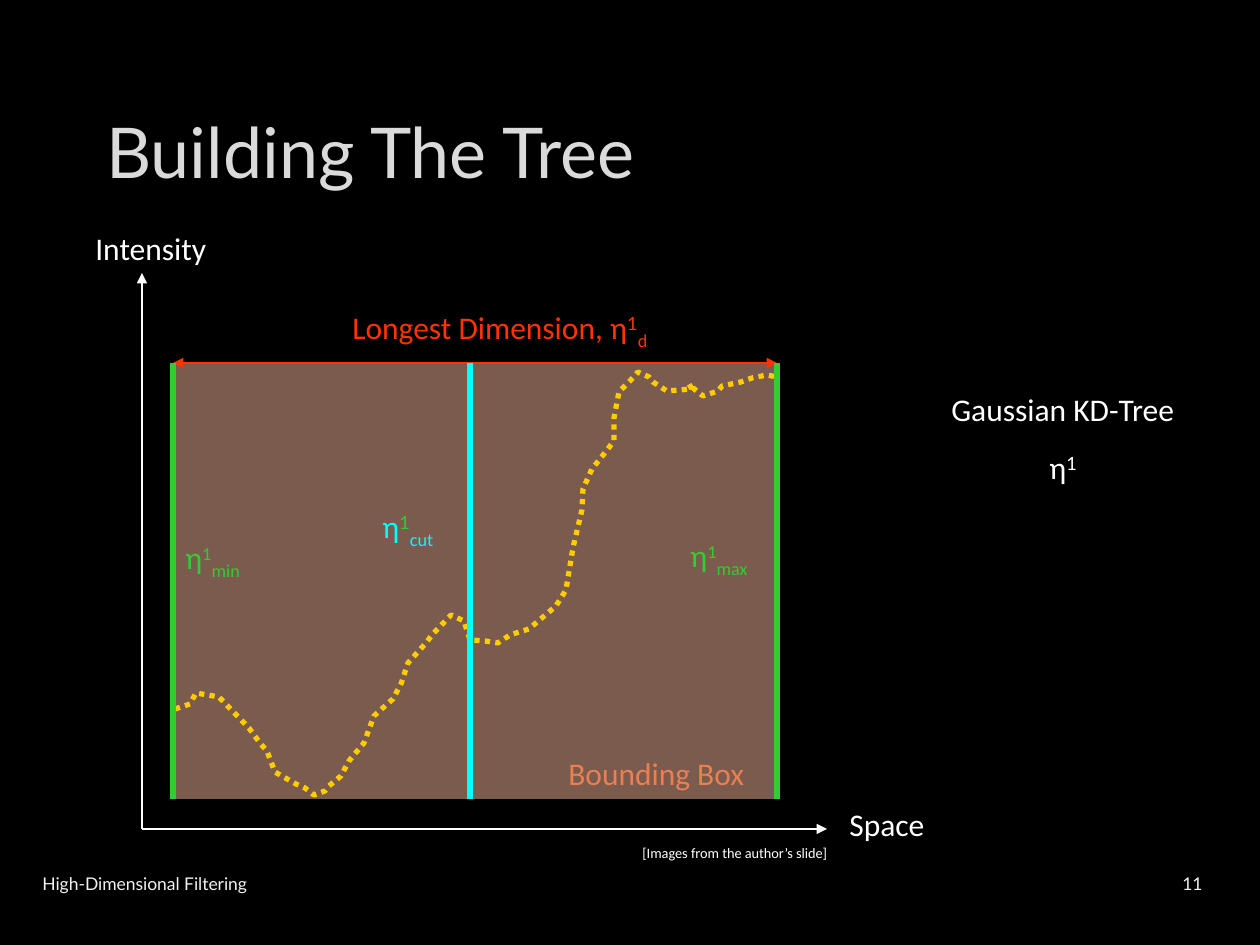
from lxml import etree
from pptx import Presentation
from pptx import util as u
from pptx.dml.color import RGBColor
from pptx.enum import dml, shapes, text
from pptx.oxml import ns

PX = u.Inches(1) / 126
BLACK = RGBColor(0x00, 0x00, 0x00)
WHITE = RGBColor(0xFF, 0xFF, 0xFF)
TITLE_GREY = RGBColor(0xDA, 0xDA, 0xDA)
FOOTER_GREY = RGBColor(0xF2, 0xF2, 0xF2)
PEACH = RGBColor(0xF4, 0xB6, 0x9B)
ORANGE = RGBColor(0xE9, 0x80, 0x52)
YELLOW = RGBColor(0xFF, 0xCC, 0x00)
RED = RGBColor(0xFF, 0x33, 0x00)
GREEN = RGBColor(0x33, 0xCC, 0x33)
CYAN = RGBColor(0x00, 0xFF, 0xFF)

SUPER, SUB = 30000, -25000
LEFT, CUT, RIGHT, TOP, BOTTOM = 173, 470, 777, 363, 799
ORIGIN_X, ORIGIN_Y = 142, 829

SIGNAL = [
    (175, 709), (190, 704), (196, 693), (219, 697), (249, 728), (260, 743),
    (267, 751), (275, 772), (296, 784), (305, 788), (314, 795), (325, 791),
    (329, 786), (341, 776), (349, 761), (364, 743), (374, 716), (393, 699),
    (401, 684), (408, 663), (426, 643), (432, 635), (451, 615), (464, 621),
    (470, 640), (485, 641), (498, 643), (510, 635), (529, 629), (556, 606),
    (566, 590), (573, 548), (582, 510), (583, 489), (592, 469), (604, 454),
    (614, 441), (614, 418), (619, 392), (630, 381), (638, 372), (649, 377),
    (653, 382), (667, 391), (692, 389), (689, 384), (693, 388), (703, 396),
    (718, 391), (722, 386), (741, 382), (752, 378), (767, 375), (777, 377),
]


def px(*lengths):
    return [round(length * PX) for length in lengths]


def add_run(paragraph, content, size=18, color=WHITE, font="Calibri", baseline=0):
    run = paragraph.add_run()
    run.text = content
    run.font.size = u.Pt(size)
    run.font.name = font
    run.font.color.rgb = color
    if baseline:
        run._r.get_or_add_rPr().set("baseline", str(baseline))


class Canvas:
    def __init__(self, slide, background):
        self.slide = slide
        slide.background.fill.solid()
        slide.background.fill.fore_color.rgb = background

    def box(self, left, top, width, height, color, opacity):
        area = self.slide.shapes.add_shape(
            shapes.MSO_SHAPE.RECTANGLE, *px(left, top, width, height))
        area.shadow.inherit = False
        area.fill.solid()
        area.fill.fore_color.rgb = color
        area.line.fill.background()
        fill_color = area.fill._xPr.find(".//" + ns.qn("a:srgbClr"))
        etree.SubElement(fill_color, ns.qn("a:alpha"), val=str(opacity * 1000))

    def line(self, start, end, color, width=0.75, head=False, tail=False):
        connector = self.slide.shapes.add_connector(
            shapes.MSO_CONNECTOR.STRAIGHT, *px(*start, *end))
        connector.line.color.rgb = color
        connector.line.width = u.Pt(width)
        outline = connector.line._get_or_add_ln()
        for end_tag, shown in (("a:headEnd", head), ("a:tailEnd", tail)):
            if shown:
                etree.SubElement(outline, ns.qn(end_tag), type="triangle")
        etree.SubElement(connector._element.spPr, ns.qn("a:effectLst"))

    def dotted_curve(self, points, color, width):
        builder = self.slide.shapes.build_freeform(*points[0], scale=PX)
        builder.add_line_segments(points[1:], close=False)
        curve = builder.convert_to_shape()
        curve.shadow.inherit = False
        curve.fill.background()
        curve.line.color.rgb = color
        curve.line.width = u.Pt(width)
        curve.line.dash_style = dml.MSO_LINE.ROUND_DOT

    def text(self, left, top, width, height, *parts, wrap=False, middle=False,
             align=text.PP_ALIGN.LEFT, **style):
        frame = self.slide.shapes.add_textbox(*px(left, top, width, height)).text_frame
        frame.word_wrap = wrap
        if middle:
            frame.vertical_anchor = text.MSO_ANCHOR.MIDDLE
        paragraph = frame.paragraphs[0]
        paragraph.alignment = align
        for content, changes in parts:
            add_run(paragraph, content, **{**style, **changes})


def main():
    deck = Presentation()
    deck.slide_width, deck.slide_height = u.Inches(10), u.Inches(7.5)
    canvas = Canvas(deck.slides.add_slide(deck.slide_layouts[6]), BLACK)
    lato_super = {"font": "Lato", "baseline": SUPER}

    canvas.box(LEFT, TOP, RIGHT - LEFT, BOTTOM - TOP, PEACH, 50)
    canvas.text(94, 84, 1070, 134, ("Building The Tree", {}),
                size=40, color=TITLE_GREY, font="Lato", wrap=True, middle=True)
    canvas.dotted_curve(SIGNAL, YELLOW, 3)

    for axis_end in ((827, ORIGIN_Y), (ORIGIN_X, 273)):
        canvas.line((ORIGIN_X, ORIGIN_Y), axis_end, WHITE, tail=True)
    canvas.text(837, 799, 101, 50, ("Space", {}))
    canvas.text(83, 223, 137, 50, ("Intensity", {}))
    canvas.text(556, 748, 202, 50, ("Bounding Box", {}), color=ORANGE)

    canvas.line((LEFT, TOP), (RIGHT, TOP), RED, head=True, tail=True)
    canvas.text(340, 302, 339, 88, ("Longest Dimension, η", {}),
                ("1", lato_super), ("d", {"baseline": SUB}), color=RED)

    for x, color in ((LEFT, GREEN), (RIGHT, GREEN), (CUT, CYAN)):
        canvas.line((x, TOP), (x, BOTTOM), color, width=3)
    for left, top, width, bound, color, exponent in (
        (173, 532, 101, "min", GREEN, {"baseline": SUPER}),
        (678, 530, 103, "max", GREEN, {"baseline": SUPER}),
        (370, 501, 96, "cut", CYAN, {**lato_super, "color": GREEN}),
    ):
        canvas.text(left, top, width, 50, ("η", {}), ("1", exponent),
                    (bound, {"baseline": SUB}), color=color)

    canvas.text(1037, 442, 79, 50, ("η", {}), ("1", lato_super), wrap=True)
    canvas.text(939, 384, 251, 50, ("Gaussian KD-Tree", {}))
    canvas.text(630, 838, 215, 30, ("[Images from the author’s slide]", {}), size=8.2)

    footer = {"size": 10, "color": FOOTER_GREY, "font": "Lato",
              "wrap": True, "middle": True}
    canvas.text(30, 859, 689, 50, ("High-Dimensional Filtering", {}), **footer)
    canvas.text(1137, 859, 78, 50, ("11", {}), align=text.PP_ALIGN.RIGHT, **footer)
    deck.save("out.pptx")


if __name__ == "__main__":
    main()
